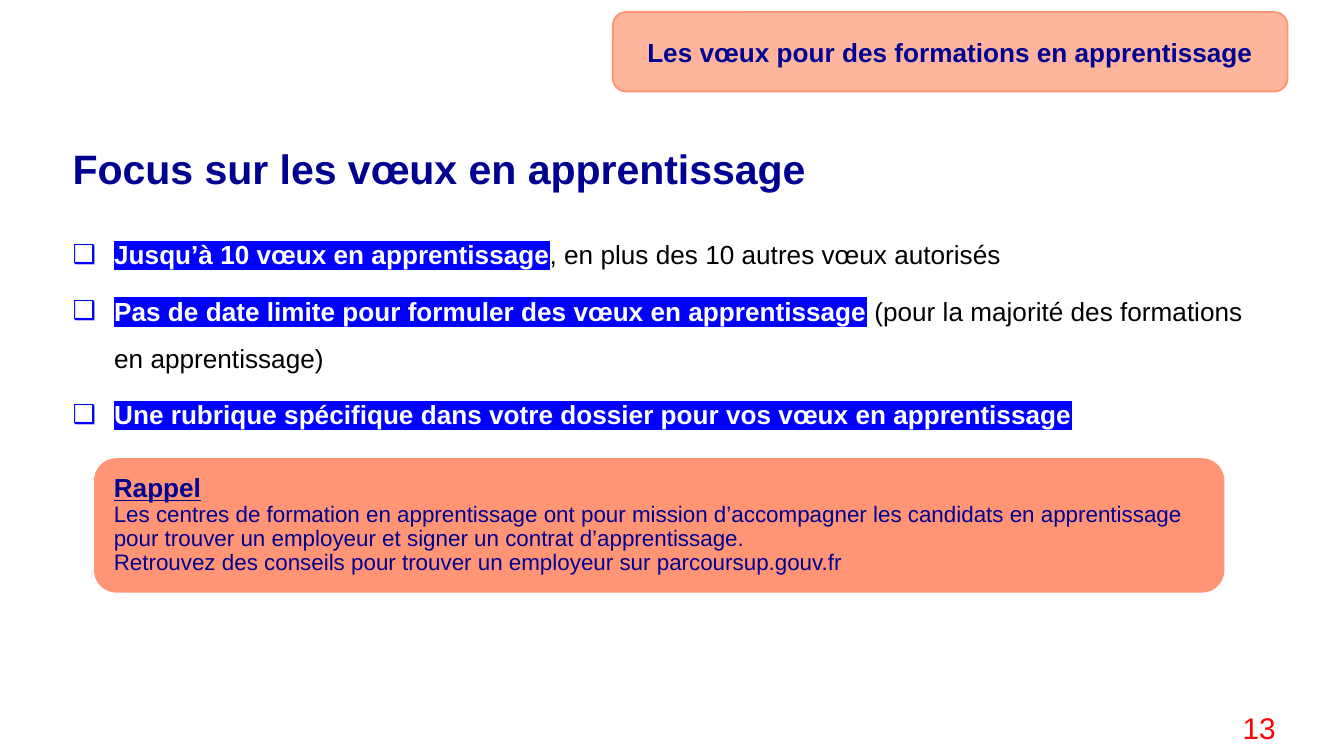
from lxml.etree import SubElement
from pptx import Presentation
from pptx.dml.color import RGBColor
from pptx.enum.shapes import MSO_SHAPE as Shape
from pptx.enum.text import MSO_ANCHOR as Anchor, PP_ALIGN as Align
from pptx.oxml.ns import qn
from pptx.util import Inches, Pt

COLORS = {
    "navy": "000091",
    "blue": "0000FF",
    "salmon": "FF9575",
    "white": "FFFFFF",
    "black": "000000",
    "red": "FF0000",
}

KEY = {"size": Pt(14), "bold": True, "color": "white", "highlight": "blue"}
PLAIN = {"size": Pt(14), "color": "black"}
BULLETS = [
    [("Jusqu’à 10 vœux en apprentissage", KEY),
     (", en plus des 10 autres vœux autorisés", PLAIN)],
    [("Pas de date limite pour formuler des vœux en apprentissage", KEY),
     (" (pour la majorité des formations en apprentissage)", PLAIN)],
    [("Une rubrique spécifique dans votre dossier pour vos vœux en apprentissage", KEY)],
]

NOTE = {"size": Pt(12), "color": "navy"}
REMINDER = [
    [("Rappel", {"size": Pt(14), "bold": True, "underline": True, "color": "navy"})],
    [("Les centres de formation en apprentissage ont pour mission d’accompagner "
      "les candidats en apprentissage pour trouver un employeur et signer un "
      "contrat d’apprentissage.", NOTE)],
    [("Retrouvez des conseils pour trouver un employeur sur parcoursup.gouv.fr", NOTE)],
]


def rgb(name):
    return RGBColor.from_string(COLORS[name])


def add_span(para, text, color, highlight=None, **font):
    span = para.add_run()
    span.text = text
    span.font.name = "Arial"
    for name, value in font.items():
        setattr(span.font, name, value)
    span.font.color.rgb = rgb(color)
    if highlight:
        props = span.font._element
        mark = SubElement(props, qn("a:highlight"))
        SubElement(mark, qn("a:srgbClr"), val=COLORS[highlight])
        props.find(qn("a:solidFill")).addnext(mark)


def fill_text(shape, paragraphs, anchor=Anchor.TOP, **layout):
    """Write paragraphs of (text, format) spans and return them."""
    frame = shape.text_frame
    frame.word_wrap = True
    frame.vertical_anchor = anchor
    for index, spans in enumerate(paragraphs):
        para = frame.add_paragraph() if index else frame.paragraphs[0]
        for name, value in layout.items():
            setattr(para, name, value)
        for text, style in spans:
            add_span(para, text, **style)
    return frame.paragraphs


def add_text(page, box, paragraphs, inset=None, **layout):
    shape = page.shapes.add_textbox(*map(Inches, box))
    if inset is not None:
        for side in ("left", "top", "right", "bottom"):
            setattr(shape.text_frame, f"margin_{side}", Inches(inset))
    return fill_text(shape, paragraphs, **layout)


def add_panel(page, box):
    panel = page.shapes.add_shape(Shape.ROUNDED_RECTANGLE, *map(Inches, box))
    panel.shadow.inherit = False
    panel.fill.solid()
    panel.fill.fore_color.rgb = rgb("salmon")
    panel.line.fill.background()
    return panel


def add_bullets(page, box):
    paragraphs = add_text(page, box, BULLETS, inset=0, line_spacing=1.5, space_after=Pt(5))
    indent = Inches(0.31)
    for para in paragraphs:
        props = para._p.get_or_add_pPr()
        props.set("marL", str(indent))
        props.set("indent", str(-indent))
        color = SubElement(props, qn("a:buClr"))
        SubElement(color, qn("a:srgbClr"), val=COLORS["blue"])
        SubElement(props, qn("a:buFont"), typeface="Arial")
        SubElement(props, qn("a:buChar"), char="❑")


def add_reminder(page, box):
    fill_text(add_panel(page, box), REMINDER, Anchor.MIDDLE,
              alignment=Align.LEFT, line_spacing=0.9)


def add_header(page, box):
    panel = add_panel(page, box)
    # Translucent fill inside a solid outline
    color = panel.fill._xPr.find(qn("a:solidFill"))[0]
    SubElement(color, qn("a:alpha"), val="70000")
    panel.line.color.rgb = rgb("salmon")
    panel.line.width = Pt(1)
    style = {"size": Pt(14), "bold": True, "color": "navy"}
    fill_text(panel, [[("Les vœux pour des formations en apprentissage", style)]],
              Anchor.MIDDLE, alignment=Align.CENTER)


def main():
    deck = Presentation()
    # Widescreen page, 16:9
    deck.slide_width = Inches(10)
    deck.slide_height = deck.slide_width * 9 // 16
    page = deck.slides.add_slide(deck.slide_layouts[6])

    # Title
    title = {"size": Pt(22), "bold": True, "color": "navy"}
    add_text(page, (0.54, 1.11, 9.04, 0.79),
             [[("Focus sur les vœux en apprentissage", title)]], inset=0, line_spacing=0.9)

    # Key points, reminder and section label
    add_bullets(page, (0.54, 1.66, 8.97, 3.57))
    add_reminder(page, (0.7, 3.41, 8.41, 1))
    add_header(page, (4.56, 0.09, 5.02, 0.59))

    # Page number
    add_text(page, (8.31, 5.23, 1.28, 0.39),
             [[("13", {"size": Pt(16), "color": "red"})]], alignment=Align.RIGHT)

    deck.save("out.pptx")


if __name__ == "__main__":
    main()
